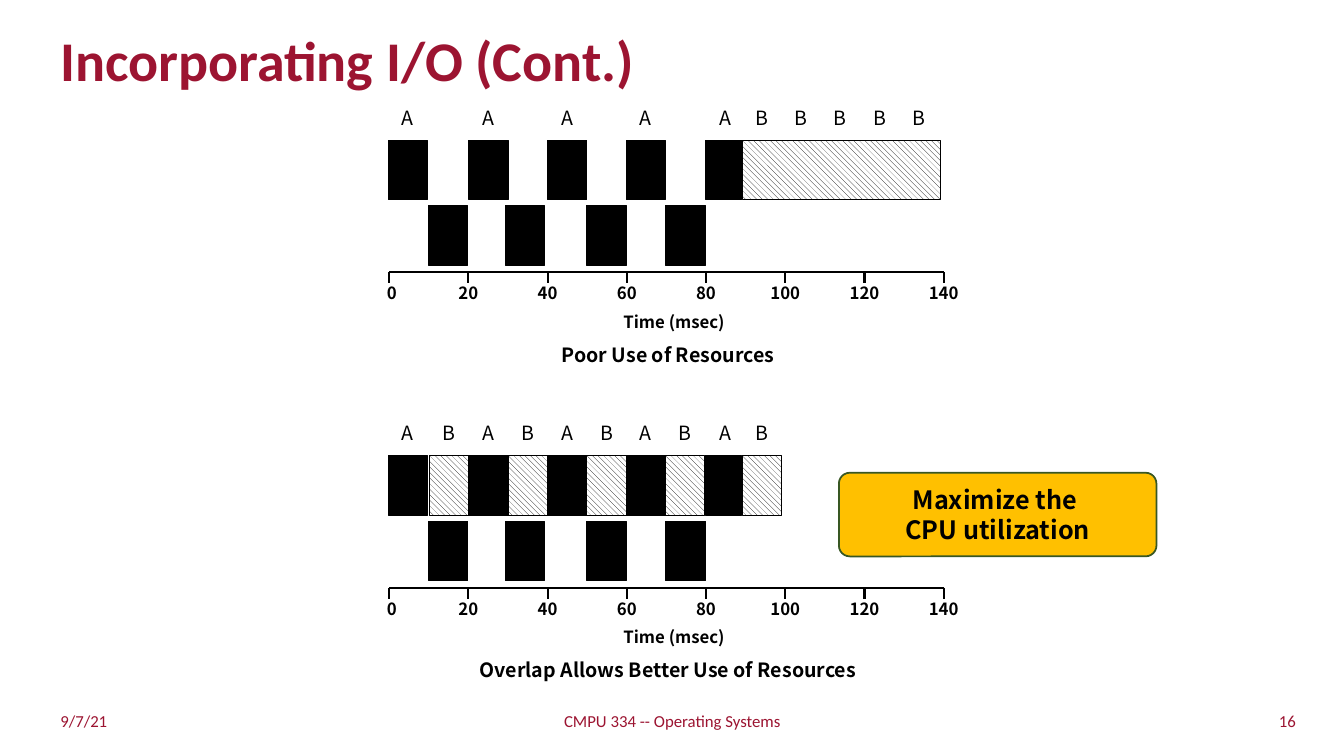
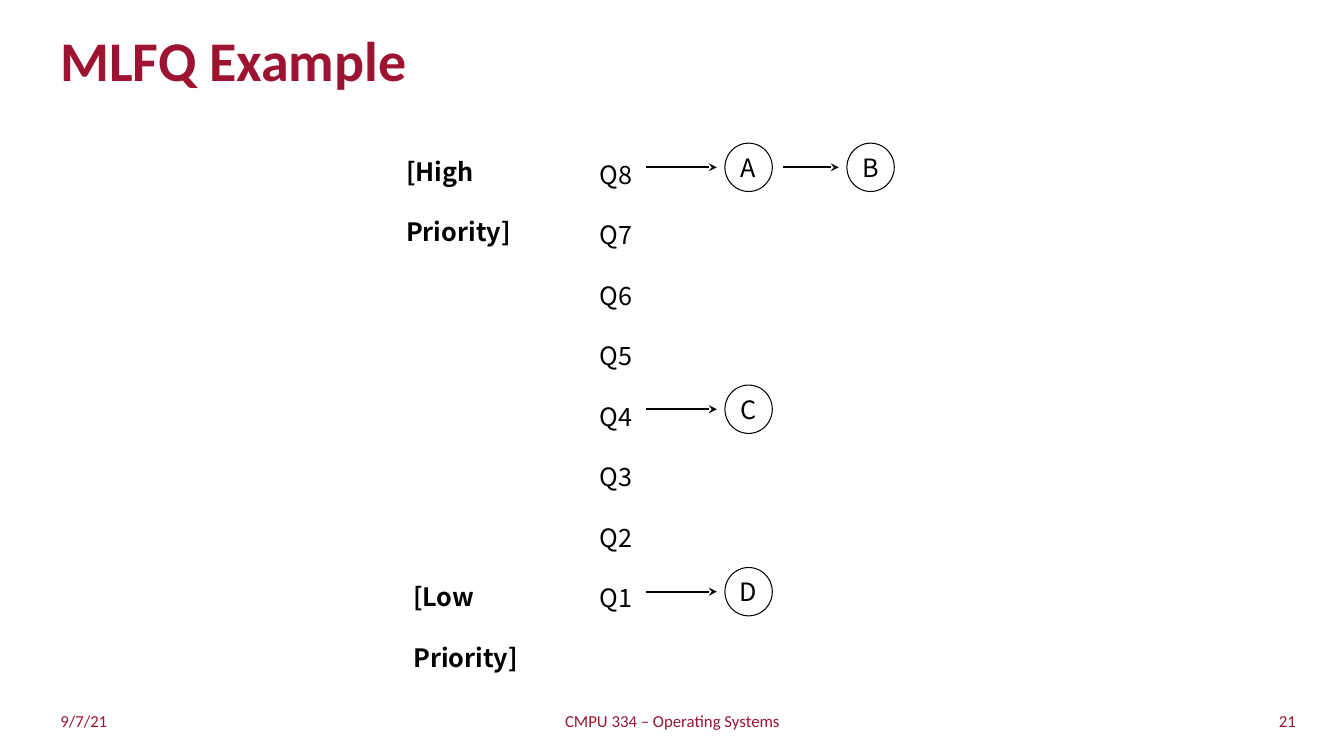
from lxml import etree
from pptx import Presentation
from pptx.dml.color import RGBColor
from pptx.enum.dml import MSO_PATTERN
from pptx.enum.shapes import MSO_CONNECTOR, MSO_SHAPE
from pptx.enum.text import MSO_ANCHOR, MSO_AUTO_SIZE, PP_ALIGN
from pptx.oxml.ns import qn
from pptx.util import Inches, Pt

LEFT, CENTER, RIGHT = PP_ALIGN.LEFT, PP_ALIGN.CENTER, PP_ALIGN.RIGHT
TOP, MIDDLE = MSO_ANCHOR.TOP, MSO_ANCHOR.MIDDLE
GROW = MSO_AUTO_SIZE.SHAPE_TO_FIT_TEXT
STRAIGHT = MSO_CONNECTOR.STRAIGHT
RECT, OVAL, ROUNDED = MSO_SHAPE.RECTANGLE, MSO_SHAPE.OVAL, MSO_SHAPE.ROUNDED_RECTANGLE
HATCH = MSO_PATTERN.WIDE_DOWNWARD_DIAGONAL

MAROON = RGBColor(0x9C, 0x14, 0x31)
BLACK = RGBColor(0, 0, 0)
WHITE = RGBColor(0xFF, 0xFF, 0xFF)
AMBER = RGBColor(0xFF, 0xC0, 0x00)
GREEN = RGBColor(0x38, 0x57, 0x23)
HEAD_FONT = "Calibri"
BODY_FONT = "Noto Sans CJK KR"


def add_text(s, box, lines, size, bold=False, align=CENTER, anchor=TOP,
             font=BODY_FONT, color=BLACK, spacing=None, sp=None):
    if sp is None:
        sp = s.shapes.add_textbox(*map(Inches, box))
        if anchor == TOP:
            sp.text_frame.auto_size = GROW
    tf = sp.text_frame
    tf.word_wrap = True
    tf.vertical_anchor = anchor
    for i, line in enumerate(lines):
        p = tf.paragraphs[0] if i == 0 else tf.add_paragraph()
        p.alignment = align
        p.line_spacing = spacing
        r = p.add_run()
        r.text = line
        r.font.name = font
        r.font.size = Pt(size)
        r.font.bold = bold
        r.font.color.rgb = color


def add_line(s, x1, y1, x2, y2, arrow=False):
    cx = s.shapes.add_connector(STRAIGHT, *map(Inches, (x1, y1, x2, y2)))
    cx.line.color.rgb = BLACK
    cx.line.width = Pt(1.5)
    if arrow:
        etree.SubElement(cx.line._get_or_add_ln(), qn("a:tailEnd"), type="stealth")
    etree.SubElement(cx._element.spPr, qn("a:effectLst"))


prs = Presentation()
prs.slide_width = Inches(13.33)
prs.slide_height = Inches(7.5)

slides = []
for title, footer, number in [
    ("Incorporating I/O (Cont.)", "CMPU 334 -- Operating Systems", "16 "),
    ("MLFQ Example", "CMPU 334 – Operating Systems", "21 "),
]:
    s = prs.slides.add_slide(prs.slide_layouts[6])
    slides.append(s)
    add_text(s, (0.5, 0.25, 11.45, 0.75), [title], 40, True, LEFT, MIDDLE,
             HEAD_FONT, MAROON, 0.9)
    for x, w, text, align in [
        (0.5, 3.76, "9/7/21", LEFT),
        (4.42, 4.5, footer, CENTER),
        (9.23, 3.76, number, RIGHT),
    ]:
        add_text(s, (x, 6.95, w, 0.4), [text], 12, False, align, MIDDLE,
                 HEAD_FONT, MAROON)

s = slides[0]
BLOCK_W, BLOCK_H = 0.39, 0.59
AXIS_X, AXIS_END = 3.86, 9.36
a_blocks = [(3.85, BLOCK_W), (4.65, BLOCK_W), (5.43, BLOCK_W), (6.21, BLOCK_W), (7, 0.36)]
io_blocks = [(4.25, BLOCK_W), (5.01, BLOCK_W), (5.82, BLOCK_W), (6.6, 0.4)]
b_overlapped = [(x, BLOCK_W) for x in (4.26, 5.04, 5.82, 6.6, 7.36)]
b_letters_late = [7.36 + 0.39 * i for i in range(5)]
b_letters_overlapped = [x for x, w in b_overlapped]

for axis_y, caption, b_blocks, b_letters in [
    (2.7, "Poor Use of Resources", [(7.36, 1.97)], b_letters_late),
    (5.83, "Overlap Allows Better Use of Resources", b_overlapped, b_letters_overlapped),
]:
    add_line(s, AXIS_X, axis_y, AXIS_END, axis_y)
    for msec in range(0, 141, 20):
        x = AXIS_X + (AXIS_END - AXIS_X) * msec / 140
        w = {1: 0.24, 2: 0.47, 3: 0.55}[len(str(msec))]
        add_line(s, x, axis_y, x, axis_y + 0.11)
        add_text(s, (x - w / 2, axis_y + 0.06, w, 0.3), [str(msec)], 12, True)
    add_text(s, (5.86, axis_y + 0.34, 1.65, 0.3), ["Time (msec)"], 12, True)
    add_text(s, (4.55, axis_y + 0.65, 4.15, 0.34), [caption], 14, True)

    for blocks, rise, hatched in [
        (b_blocks, 1.31, True), (a_blocks, 1.31, False), (io_blocks, 0.66, False),
    ]:
        for x, w in blocks:
            sp = s.shapes.add_shape(RECT, *map(Inches, (x, axis_y - rise, w, BLOCK_H)))
            sp.shadow.inherit = False
            if hatched:
                sp.fill.patterned()
                sp.fill.pattern = HATCH
                sp.fill.fore_color.rgb = BLACK
                sp.fill.back_color.rgb = WHITE
            else:
                sp.fill.solid()
                sp.fill.fore_color.rgb = BLACK
            sp.line.color.rgb = BLACK
            sp.line.width = Pt(0.75)

    for letter, xs in [("A", [x for x, w in a_blocks]), ("B", b_letters)]:
        for x in xs:
            add_text(s, (x, axis_y - 1.7, BLOCK_W, 0.34), [letter], 14)

sp = s.shapes.add_shape(ROUNDED, *map(Inches, (8.32, 4.69, 3.15, 0.83)))
sp.adjustments[0] = 0.13
sp.shadow.inherit = False
sp.fill.solid()
sp.fill.fore_color.rgb = AMBER
sp.line.color.rgb = GREEN
sp.line.width = Pt(1.25)
add_text(s, None, ["Maximize the ", "CPU utilization"], 18, True, anchor=MIDDLE, sp=sp)

s = slides[1]
add_text(s, (5.85, 1.23, 0.55, 4.95), [f"Q{n}" for n in range(8, 0, -1)], 18,
         align=LEFT, spacing=2.0)
for x, y, text in [(3.93, 1.2, "[High Priority]"), (4, 5.42, "[Low Priority]")]:
    add_text(s, (x, y, 1.85, 0.71), [text], 18, True, LEFT, spacing=2.0)

for job, arrow_x, job_x, y in [
    ("A", 6.41, 7.19, 1.66),
    ("B", 7.77, 8.4, 1.66),
    ("C", 6.41, 7.19, 4.06),
    ("D", 6.41, 7.19, 5.87),
]:
    add_line(s, arrow_x, y, job_x - 0.08, y, True)
    sp = s.shapes.add_shape(OVAL, *map(Inches, (job_x, y - 0.24, 0.47, 0.48)))
    sp.shadow.inherit = False
    sp.fill.solid()
    sp.fill.fore_color.rgb = WHITE
    sp.line.color.rgb = BLACK
    sp.line.width = Pt(0.75)
    sp.text_frame.margin_left = sp.text_frame.margin_right = Inches(0.08)
    add_text(s, None, [job], 18, anchor=MIDDLE, sp=sp)

prs.save("out.pptx")
